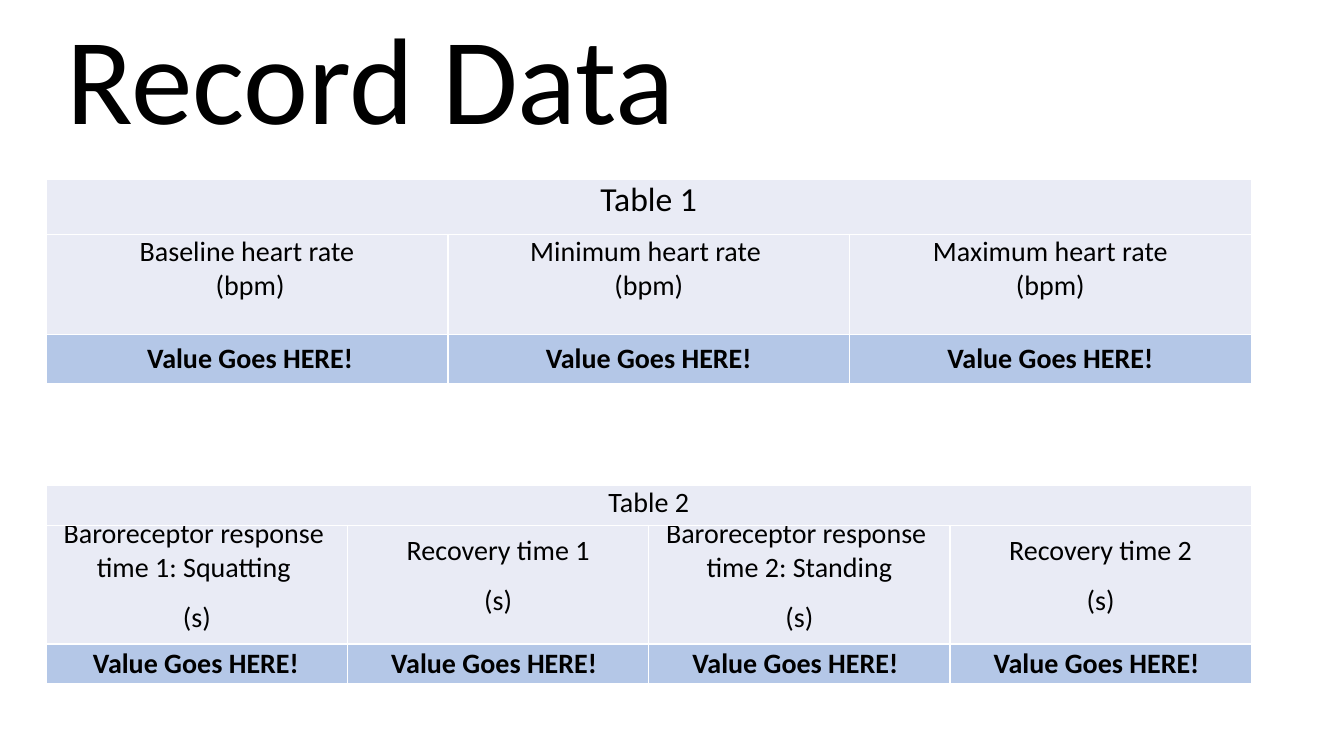
import pptx
import pptx.util
import pptx.dml.color
import pptx.enum.text
import pptx.oxml
import pptx.oxml.ns

Inches, Pt = pptx.util.Inches, pptx.util.Pt
ALIGN, ANCHOR = pptx.enum.text.PP_ALIGN, pptx.enum.text.MSO_ANCHOR

# Content
TITLE = "Record Data"
VALUE = "Value Goes HERE!"
TABLES = [
    {
        "title": "Table 1", "title_size": 24, "top": 1.78, "rows": [0.55, 0.99, 0.49],
        "header_format": "normal", "header_anchor": ANCHOR.TOP,
        "headers": [
            ["Baseline heart rate \n(bpm)"],
            ["Minimum heart rate \n(bpm)"],
            ["Maximum heart rate\n(bpm)"],
        ],
        "header_shift": [0.06, 0, 0], "value_shift": [0.06, 0, 0],
    },
    {
        "title": "Table 2", "title_size": 20, "top": 4.82, "rows": [0.39, 1.18, 0.39],
        "header_format": "tight", "header_anchor": ANCHOR.MIDDLE,
        "headers": [
            ["Baroreceptor response ", "time 1: Squatting ", "(s)"],
            ["Recovery time 1", "(s)"],
            ["Baroreceptor response ", "time 2: Standing", "(s)"],
            ["Recovery time 2", "(s)"],
        ],
        "header_shift": [0, 0, 0, 0], "value_shift": [-0.02, -0.08, -0.08, -0.08],
    },
]

# Formats
COLORS = {"text": "000000", "label": "E9EBF5", "value": "B4C7E7", "border": "FFFFFF"}
FONT = "Calibri"
LEFT, WIDTH, SIDE_MARGIN = 0.46, 11.95, 0.07
PARAGRAPHS = {
    "title": {"line_spacing": 0.9},
    "normal": {"alignment": ALIGN.CENTER, "space_before": Pt(4), "space_after": Pt(4)},
    "tight": {"alignment": ALIGN.CENTER, "line_spacing": Pt(12),
              "space_before": Pt(6), "space_after": Pt(6)},
}
UNIT_GAP = Pt(18)  # space above the unit line in tight headers


def set_all(target, values):
    for name, value in values.items():
        setattr(target, name, value)


def color(name):
    return pptx.dml.color.RGBColor.from_string(COLORS[name])


def write(frame, lines, paragraph_format, size, bold=False):
    for index, line in enumerate(lines):
        para = frame.add_paragraph() if index else frame.paragraphs[0]
        para.text = line
        set_all(para, PARAGRAPHS[paragraph_format])
        if paragraph_format == "tight" and line == "(s)":
            para.space_before = UNIT_GAP
        for span in para.runs:
            set_all(span.font, {"name": FONT, "size": Pt(size), "bold": bold})
            span.font.color.rgb = color("text")


def style_cell(cell, fill, anchor, shift=0):
    """Fill and border a cell; shift moves centred text sideways, in inches."""
    set_all(cell, {
        "vertical_anchor": anchor, "margin_top": 0, "margin_bottom": 0,
        "margin_left": Inches(SIDE_MARGIN + max(shift, 0)),
        "margin_right": Inches(SIDE_MARGIN + max(-shift, 0)),
    })
    cell.fill.solid()
    cell.fill.fore_color.rgb = color(fill)
    properties = cell._tc.get_or_add_tcPr()
    for index, side in enumerate(("lnL", "lnR", "lnT", "lnB")):
        properties.insert(index, pptx.oxml.parse_xml(
            f'<a:{side} {pptx.oxml.ns.nsdecls("a")} w="12700"><a:solidFill>'
            f'<a:srgbClr val="{COLORS["border"]}"/></a:solidFill></a:{side}>'))


def add_data_table(page, data):
    count = len(data["headers"])
    table = page.shapes.add_table(
        len(data["rows"]), count, Inches(LEFT), Inches(data["top"]),
        Inches(WIDTH), Inches(sum(data["rows"]))).table
    set_all(table, {"first_row": False, "horz_banding": False})
    for row, height in zip(table.rows, data["rows"]):
        row.height = Inches(height)

    for index, header in enumerate(data["headers"]):
        table.columns[index].width = Inches(WIDTH / count)
        top, label, value = (table.cell(row, index) for row in range(3))
        style_cell(top, "label", ANCHOR.TOP)
        style_cell(label, "label", data["header_anchor"], data["header_shift"][index])
        write(label.text_frame, header, data["header_format"], 20)
        style_cell(value, "value", ANCHOR.MIDDLE, data["value_shift"][index])
        write(value.text_frame, [VALUE], "normal", 20, bold=True)

    # Title row across all columns
    table.cell(0, 0).merge(table.cell(0, count - 1))
    write(table.cell(0, 0).text_frame, [data["title"]], "normal", data["title_size"])


def main():
    deck = pptx.Presentation()
    set_all(deck, {"slide_width": Inches(13.33), "slide_height": Inches(7.5)})
    page = deck.slides.add_slide(deck.slide_layouts[6])

    # Heading
    box = page.shapes.add_textbox(Inches(0.56), Inches(0.11), Inches(11.5), Inches(1.45))
    set_all(box.text_frame, {"word_wrap": True, "vertical_anchor": ANCHOR.MIDDLE})
    write(box.text_frame, [TITLE], "title", 88)

    # Tables
    for data in TABLES:
        add_data_table(page, data)
    deck.save("out.pptx")


if __name__ == "__main__":
    main()
